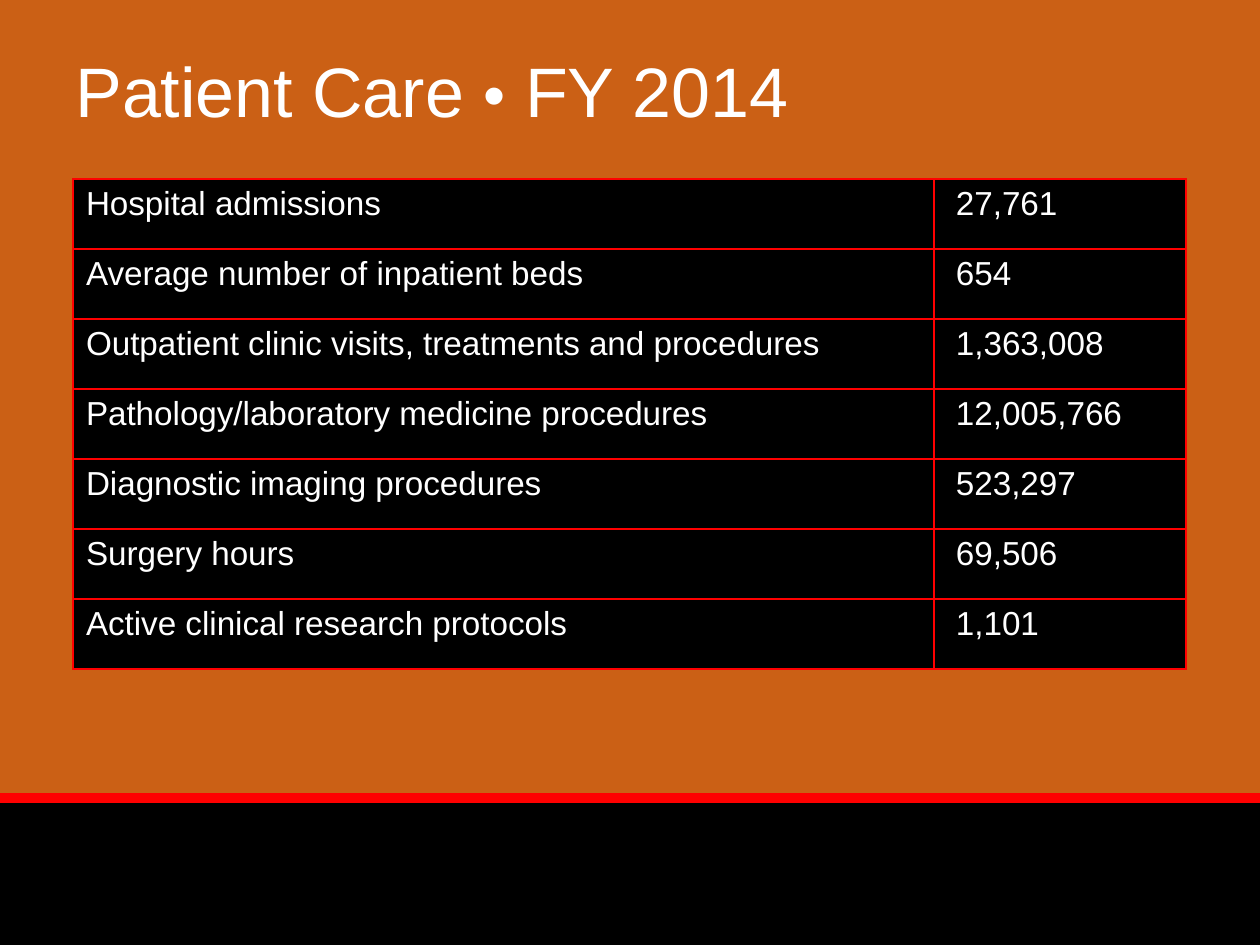
from typing import NamedTuple

from lxml.etree import SubElement
from pptx import Presentation
from pptx.dml.color import RGBColor
from pptx.enum.shapes import MSO_CONNECTOR, MSO_SHAPE
from pptx.enum.text import MSO_ANCHOR
from pptx.oxml import parse_xml
from pptx.oxml.ns import nsdecls, qn
from pptx.util import Emu, Pt

PX_PER_INCH = 126
WIDTH, HEIGHT = 1260, 945
HORIZON = 798  # where the orange field meets the black footer
ROW_HEIGHT = 70
COLUMN_WIDTHS = (861, 252)
CELL_INDENTS = (13, 22)

FONT = "Arial"
BLACK = RGBColor(0x00, 0x00, 0x00)
WHITE = RGBColor(0xFF, 0xFF, 0xFF)
ORANGE = RGBColor(0xCB, 0x60, 0x15)
RED = RGBColor(0xFF, 0x00, 0x00)


class Band(NamedTuple):
    top: int
    height: int
    color: RGBColor


class Measure(NamedTuple):
    label: str
    value: str


BANDS = (
    Band(HORIZON, HEIGHT - HORIZON, BLACK),
    Band(0, HORIZON, ORANGE),
)

MEASURES = (
    Measure("Hospital admissions", "27,761"),
    Measure("Average number of inpatient beds", "654"),
    Measure("Outpatient clinic visits, treatments and procedures", "1,363,008"),
    Measure("Pathology/laboratory medicine procedures", "12,005,766"),
    Measure("Diagnostic imaging procedures", "523,297"),
    Measure("Surgery hours", "69,506"),
    Measure("Active clinical research protocols", "1,101"),
)


def px(n: int) -> Emu:
    return Emu(round(n * 914400 / PX_PER_INCH))


def add_band(s, band: Band) -> None:
    sp = s.shapes.add_shape(
        MSO_SHAPE.RECTANGLE, 0, px(band.top), px(WIDTH), px(band.height))
    sp.shadow.inherit = False
    sp.fill.solid()
    sp.fill.fore_color.rgb = band.color
    sp.line.fill.background()


def add_title(s) -> None:
    sp = s.shapes.add_textbox(px(63), px(10), px(966), px(158))
    tf = sp.text_frame
    tf.word_wrap = True
    tf.vertical_anchor = MSO_ANCHOR.MIDDLE
    p = tf.paragraphs[0]
    p.font.name = FONT
    p.font.color.rgb = WHITE
    for text, size in (("Patient Care ", 40), ("•", 36), (" FY 2014", 40)):
        r = p.add_run()
        r.text = text
        r.font.size = Pt(size)


def add_divider(s) -> None:
    line = s.shapes.add_connector(
        MSO_CONNECTOR.STRAIGHT, 0, px(HORIZON), px(WIDTH), px(HORIZON))
    line.line.color.rgb = RED
    line.line.width = Pt(6)
    SubElement(line._element.spPr, qn("a:effectLst"))


def style_cell(cell, text: str, indent: int) -> None:
    cell.margin_left = px(indent)
    p = cell.text_frame.paragraphs[0]
    p.text = text
    p.font.name = FONT
    p.font.size = Pt(19)
    p.font.color.rgb = WHITE
    # Borders come before the fill in the cell properties
    tc_pr = cell._tc.get_or_add_tcPr()
    for side in ("lnL", "lnR", "lnT", "lnB"):
        tc_pr.append(parse_xml(
            f'<a:{side} {nsdecls("a")} w="{Pt(1)}"><a:solidFill>'
            f'<a:srgbClr val="{RED}"/></a:solidFill></a:{side}>'))
    cell.fill.solid()
    cell.fill.fore_color.rgb = BLACK


def add_measures_table(s) -> None:
    table = s.shapes.add_table(
        len(MEASURES), len(COLUMN_WIDTHS), px(73), px(179),
        px(sum(COLUMN_WIDTHS)), px(ROW_HEIGHT * len(MEASURES))).table
    table.first_row = False
    table.horz_banding = False
    for column, width in zip(table.columns, COLUMN_WIDTHS):
        column.width = px(width)
    for row, measure in zip(table.rows, MEASURES):
        row.height = px(ROW_HEIGHT)
        for cell, text, indent in zip(row.cells, measure, CELL_INDENTS):
            style_cell(cell, text, indent)


def main() -> None:
    prs = Presentation()
    prs.slide_width, prs.slide_height = px(WIDTH), px(HEIGHT)
    s = prs.slides.add_slide(prs.slide_layouts[6])

    # Background
    for band in BANDS:
        add_band(s, band)

    # Content
    add_title(s)
    add_divider(s)
    add_measures_table(s)
    prs.save("out.pptx")


if __name__ == "__main__":
    main()
